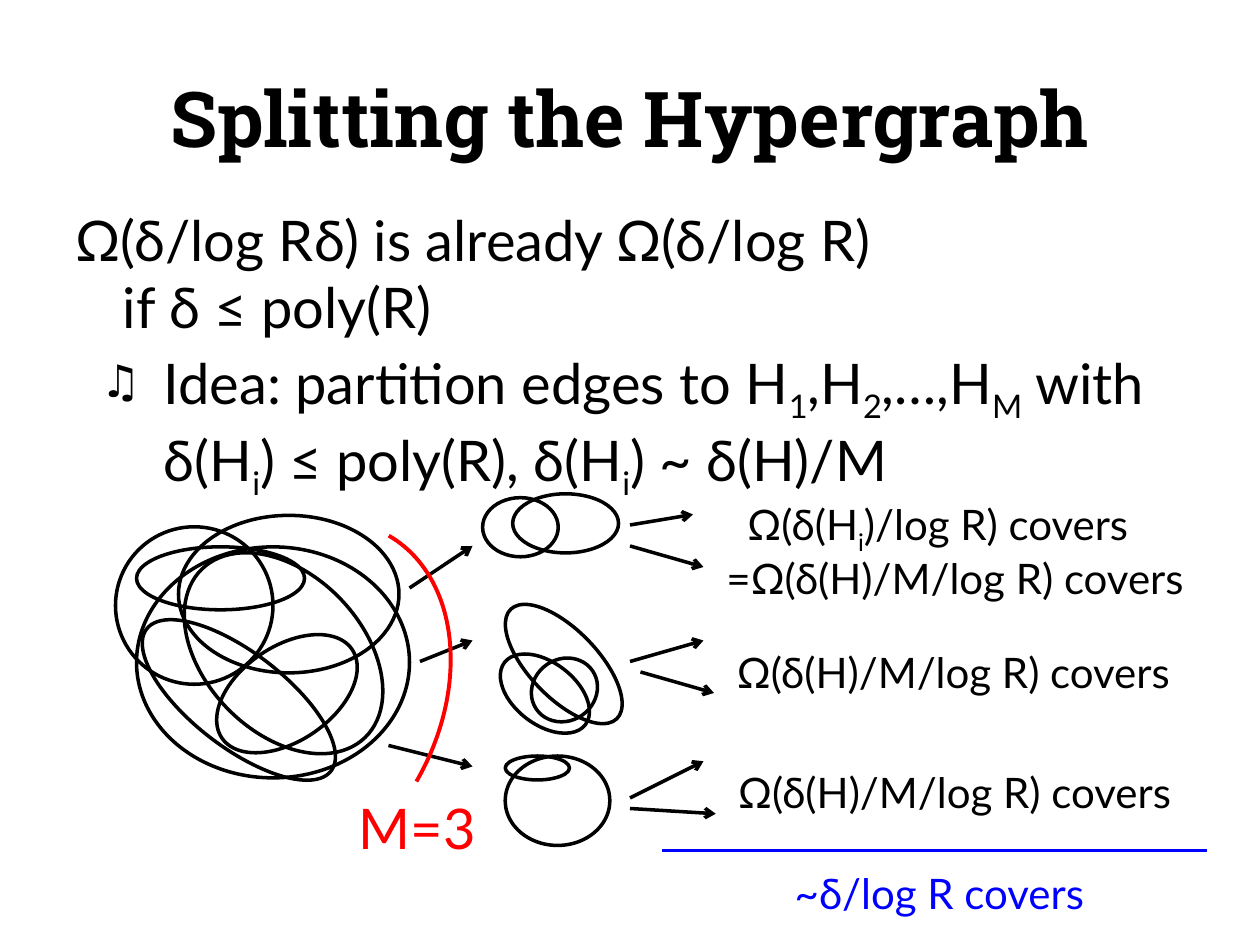
from dataclasses import dataclass

import lxml.etree
import pptx
import pptx.dml.color
import pptx.enum.shapes
import pptx.enum.text
import pptx.oxml.ns
import pptx.util

Pt = pptx.util.Pt
qn = pptx.oxml.ns.qn
SHAPE = pptx.enum.shapes.MSO_SHAPE


@dataclass(frozen=True)
class Theme:
    ink: str = "000000"
    split: str = "FF0000"
    total: str = "0000FF"
    heading_font: str = "Roboto Slab"
    body_font: str = "Lato"
    title_size: int = 44
    body_size: int = 32
    label_size: int = 24
    thin: float = 2
    thick: float = 2.25


class SlideBuilder:
    def __init__(self, slide, theme):
        self.slide = slide
        self.theme = theme

    def color(self, value):
        return pptx.dml.color.RGBColor.from_string(value)

    def box(self, left, top, width, height):
        frame = self.slide.shapes.add_textbox(
            Pt(left), Pt(top), Pt(width), Pt(height)).text_frame
        frame.word_wrap = True
        return frame

    def fill_paragraph(self, paragraph, text, size, color=None, font=None, bold=False):
        """Add the text; {braces} mark subscripts, a newline breaks the line."""
        for i, part in enumerate(text.replace("}", "{").split("{")):
            for j, line in enumerate(part.split("\n")):
                if j:
                    paragraph.add_line_break()
                if line:
                    run = paragraph.add_run()
                    run.text = line
                    if i % 2:
                        run.font._element.set("baseline", "-25000")
        paragraph.font.name = font or self.theme.body_font
        paragraph.font.size = Pt(size)
        paragraph.font.bold = bold
        paragraph.font.color.rgb = self.color(color or self.theme.ink)

    def indent(self, paragraph, left, hanging, bullet=None):
        props = paragraph._p.get_or_add_pPr()
        props.set("marL", str(Pt(left)))
        props.set("indent", str(-Pt(hanging)))
        if bullet:
            lxml.etree.SubElement(props, qn("a:buSzPct")).set("val", "80000")
            lxml.etree.SubElement(props, qn("a:buChar")).set("char", bullet)

    def label(self, left, top, width, text, size=None, color=None):
        size = size or self.theme.label_size
        frame = self.box(left, top, width, size * 1.5)
        self.fill_paragraph(frame.paragraphs[0], text, size, color)

    def outline(self, shapes, kind, bounds, rotation=0, color=None, width=None):
        shape = shapes.add_shape(kind, *map(Pt, bounds))
        shape.rotation = rotation
        shape.shadow.inherit = False
        shape.fill.background()
        shape.line.color.rgb = self.color(color or self.theme.ink)
        shape.line.width = Pt(width or self.theme.thin)

    def hypergraph(self, edges):
        group = self.slide.shapes.add_group_shape()
        for *bounds, rotation in edges:
            self.outline(group.shapes, SHAPE.OVAL, bounds, rotation)

    def line(self, start, end, color=None, width=None, arrow=False):
        connector = self.slide.shapes.add_connector(
            pptx.enum.shapes.MSO_CONNECTOR.STRAIGHT, *map(Pt, start + end))
        connector.line.color.rgb = self.color(color or self.theme.ink)
        connector.line.width = Pt(width or self.theme.thin)
        if arrow:
            line_props = connector.line._get_or_add_ln()
            lxml.etree.SubElement(line_props, qn("a:tailEnd")).set("type", "arrow")
        lxml.etree.SubElement(connector._element.spPr, qn("a:effectLst"))


def main():
    theme = Theme()
    deck = pptx.Presentation()
    deck.slide_width, deck.slide_height = Pt(720), Pt(540)
    builder = SlideBuilder(deck.slides.add_slide(deck.slide_layouts[6]), theme)

    # Title
    title = builder.box(36, 21.6, 648, 90)
    title.vertical_anchor = pptx.enum.text.MSO_ANCHOR.MIDDLE
    heading = title.paragraphs[0]
    heading.alignment = pptx.enum.text.PP_ALIGN.CENTER
    builder.fill_paragraph(heading, "Splitting the Hypergraph", theme.title_size,
                           font=theme.heading_font, bold=True)

    # Claim and idea
    body = builder.box(36, 114, 666, 390)
    claim = body.paragraphs[0]
    builder.indent(claim, 27, 27)
    builder.fill_paragraph(claim, "Ω(δ/log Rδ) is already Ω(δ/log R)\nif δ ≤ poly(R)",
                           theme.body_size)
    idea = body.add_paragraph()
    idea.level = 1
    builder.indent(idea, 50.4, 36, "♫")
    idea.space_before = Pt(5)
    builder.fill_paragraph(idea, "Idea: partition edges to H{1},H{2},…,H{M} with "
                           "δ(H{i}) ≤ poly(R), δ(H{i}) ~ δ(H)/M", theme.body_size)

    # Whole hypergraph, then its three parts: left, top, width, height, rotation
    whole = [
        (66, 301, 90, 90, 0),
        (78, 312.5, 96, 36, 0),
        (70, 373, 133, 54, 37.6),
        (102, 294.5, 126, 90, 0),
        (95, 328.3, 134, 90, 45.9),
        (119, 369.4, 90, 54, 325.7),
        (78, 312.5, 156, 132, 0),
    ]
    upper_part = [(275.8, 284.4, 43.2, 33.8, 0), (293, 282.2, 60.5, 33.8, 0)]
    middle_part = [
        (282.2, 378.7, 58.3, 35.3, 37.6),
        (278.6, 360, 87.1, 38.9, 45.9),
        (303.1, 376.6, 38.9, 35.3, 325.7),
    ]
    lower_part = [(288.7, 432, 36.7, 13.7, 0), (288.7, 432, 59.8, 51.1, 0)]
    for edges in (whole, upper_part, middle_part, lower_part):
        builder.hypergraph(edges)

    # Arrows from the whole to the parts, and from the parts to their covers
    splitting = [((234, 336), (270, 312)), ((240, 378), (270, 366)),
                 ((222, 426), (270, 438))]
    covering = [((360, 300), (396, 294)), ((360, 312), (402, 324)),
                ((360, 378), (402, 366)), ((366, 384), (408, 396)),
                ((360, 456), (402, 435)), ((360, 462), (409, 465))]
    for start, end in splitting + covering:
        builder.line(start, end, arrow=True)

    # Cut into M parts
    builder.outline(builder.slide.shapes, SHAPE.ARC, (81.4, 290.9, 167.8, 227.5),
                    30, theme.split, theme.thick)
    builder.label(198, 450, 88.6, "M=3", theme.body_size, theme.split)

    # Covers of each part
    part_covers = "Ω(δ(H)/M/log R) covers"
    builder.label(420, 281.5, 284, "Ω(δ(H{i})/log R) covers")
    builder.label(408, 312, 312, "=" + part_covers)
    builder.label(414, 366, 306, part_covers)
    builder.label(414.7, 434.2, 305, part_covers)

    # Total
    builder.line((690, 486), (378, 486), theme.total, theme.thick)
    builder.label(447, 492, 207, "~δ/log R covers", color=theme.total)

    deck.save("out.pptx")


if __name__ == "__main__":
    main()
